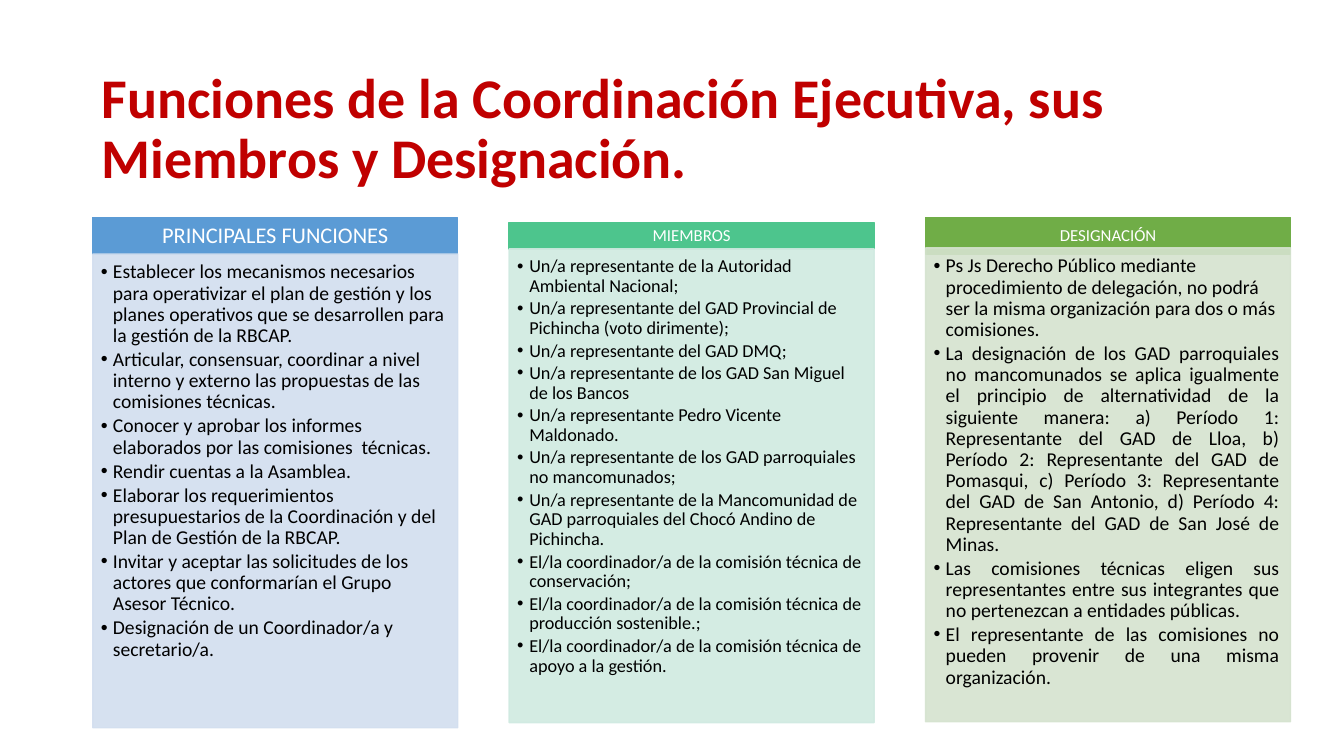
from dataclasses import dataclass

from lxml.etree import SubElement
from pptx import Presentation
from pptx.dml.color import RGBColor
from pptx.enum.shapes import MSO_SHAPE
from pptx.enum.text import MSO_ANCHOR, PP_ALIGN
from pptx.oxml.ns import qn
from pptx.util import Inches, Pt

COLUMN_LEFT, COLUMN_STEP, COLUMN_WIDTH, BODY_HEIGHT = 0.92, 4.13, 3.62, 4.7
INDENT = 0.12


@dataclass
class Column:
    """Content, colours and sizes of one column."""
    heading: str
    items: list
    dark: str
    light: str
    heading_size: int
    item_size: int
    top: float
    heading_height: float
    body_top: float
    justified_from: int


COLUMNS = [
    Column("PRINCIPALES FUNCIONES", [
        "Establecer los mecanismos necesarios para operativizar el plan de gestión y los planes "
        "operativos que se desarrollen para la gestión de la RBCAP.",
        "Articular, consensuar, coordinar a nivel interno y externo las propuestas de las "
        "comisiones técnicas.",
        "Conocer y aprobar los informes elaborados por las comisiones  técnicas.",
        "Rendir cuentas a la Asamblea.",
        "Elaborar los requerimientos presupuestarios de la Coordinación y del Plan de Gestión "
        "de la RBCAP.",
        "Invitar y aceptar las solicitudes de los actores que conformarían el Grupo Asesor "
        "Técnico.",
        "Designación de un Coordinador/a y secretario/a.",
    ], "5B9BD5", "D2DEEF", 16, 14, 2.16, 0.36, 2.52, 7),
    Column("MIEMBROS", [
        "Un/a representante de la Autoridad Ambiental Nacional;",
        "Un/a representante del GAD Provincial de Pichincha (voto dirimente);",
        "Un/a representante del GAD DMQ;",
        "Un/a representante de los GAD San Miguel de los Bancos",
        "Un/a representante Pedro Vicente Maldonado.",
        "Un/a representante de los GAD parroquiales no mancomunados;",
        "Un/a representante de la Mancomunidad de GAD parroquiales del Chocó Andino de "
        "Pichincha.",
        "El/la coordinador/a de la comisión técnica de conservación;",
        "El/la coordinador/a de la comisión técnica de producción sostenible.;",
        "El/la coordinador/a de la comisión técnica de apoyo a la gestión.",
    ], "4DC58D", "D0EAE1", 12, 13, 2.21, 0.26, 2.47, 10),
    Column("DESIGNACIÓN", [
        "Ps Js Derecho Público mediante procedimiento de delegación, no podrá ser la misma "
        "organización para dos o más comisiones.",
        "La designación de los GAD parroquiales no mancomunados se aplica igualmente el "
        "principio de alternatividad de la siguiente manera: a) Período 1: Representante del "
        "GAD de Lloa, b) Período 2: Representante del GAD de Pomasqui, c) Período 3: "
        "Representante del GAD de San Antonio, d) Período 4: Representante del GAD de San "
        "José de Minas.",
        "Las comisiones técnicas eligen sus representantes entre sus integrantes que no "
        "pertenezcan a entidades públicas.",
        "El representante de las comisiones no pueden provenir de una misma organización.",
    ], "70AD47", "D5E3CF", 12, 14, 2.16, 0.36, 2.46, 1),
]


def color(value):
    """Turn a hex string into a colour."""
    return RGBColor.from_string(value)


def style(paragraph, size, hex_color, align, bold=False):
    """Set the font, alignment and line spacing of a paragraph."""
    paragraph.alignment = align
    paragraph.line_spacing = 0.9
    font = paragraph.font
    font.name, font.size, font.bold = "Calibri", Pt(size), bold
    font.color.rgb = color(hex_color)


def add_panel(slide, left, top, width, height, fill, margins, anchor, alpha=100):
    """Draw a filled rectangle and return its text frame."""
    panel = slide.shapes.add_shape(
        MSO_SHAPE.RECTANGLE, Inches(left), Inches(top), Inches(width), Inches(height))
    panel.shadow.inherit = False
    panel.fill.solid()
    panel.fill.fore_color.rgb = color(fill)
    panel.line.color.rgb = color(fill)
    panel.line.width = Pt(1)
    if alpha < 100:
        for tint in panel._element.spPr.iter(qn("a:srgbClr")):
            SubElement(tint, qn("a:alpha")).set("val", str(alpha * 1000))
    frame = panel.text_frame
    frame.word_wrap = True
    frame.vertical_anchor = anchor
    (frame.margin_left, frame.margin_top,
     frame.margin_right, frame.margin_bottom) = map(Inches, margins)
    return frame


def add_bullet(paragraph):
    """Give a paragraph a hanging round bullet."""
    properties = paragraph._p.get_or_add_pPr()
    properties.set("marL", str(Inches(INDENT)))
    properties.set("indent", str(-Inches(INDENT)))
    SubElement(properties, qn("a:buFont")).set("typeface", "Arial")
    SubElement(properties, qn("a:buChar")).set("char", "•")


def add_title(slide, left, top, width, height):
    """Place the slide title."""
    frame = slide.shapes.add_textbox(
        Inches(left), Inches(top), Inches(width), Inches(height)).text_frame
    frame.word_wrap = True
    frame.vertical_anchor = MSO_ANCHOR.MIDDLE
    heading = frame.paragraphs[0]
    heading.text = "Funciones de la Coordinación Ejecutiva, sus Miembros y Designación."
    style(heading, 40, "C00000", PP_ALIGN.LEFT, bold=True)


def add_column(slide, column, left, width, body_height):
    """Place a heading bar and the bulleted panel below it."""
    bar = add_panel(slide, left, column.top, width, column.heading_height, column.dark,
                    (0.09, 0.05, 0.09, 0.05), MSO_ANCHOR.MIDDLE)
    bar.paragraphs[0].text = column.heading
    style(bar.paragraphs[0], column.heading_size, "FFFFFF", PP_ALIGN.CENTER)

    body = add_panel(slide, left, column.body_top, width, body_height, column.light,
                     (0.08, 0.08, 0.11, 0.12), MSO_ANCHOR.TOP, alpha=90)
    for index, text in enumerate(column.items):
        item = body.add_paragraph() if index else body.paragraphs[0]
        item.text = text
        add_bullet(item)
        justified = index >= column.justified_from
        style(item, column.item_size, "000000",
              PP_ALIGN.JUSTIFY if justified else PP_ALIGN.LEFT)
        item.space_after = Pt(2)


def main():
    """Build and save the slide."""
    deck = Presentation()
    deck.slide_width, deck.slide_height = Inches(13.33), Inches(7.5)
    slide = deck.slides.add_slide(deck.slide_layouts[6])
    add_title(slide, 0.91, 0.57, 11.5, 1.45)
    for index, column in enumerate(COLUMNS):
        add_column(slide, column, COLUMN_LEFT + index * COLUMN_STEP, COLUMN_WIDTH, BODY_HEIGHT)
    deck.save("out.pptx")


if __name__ == "__main__":
    main()
